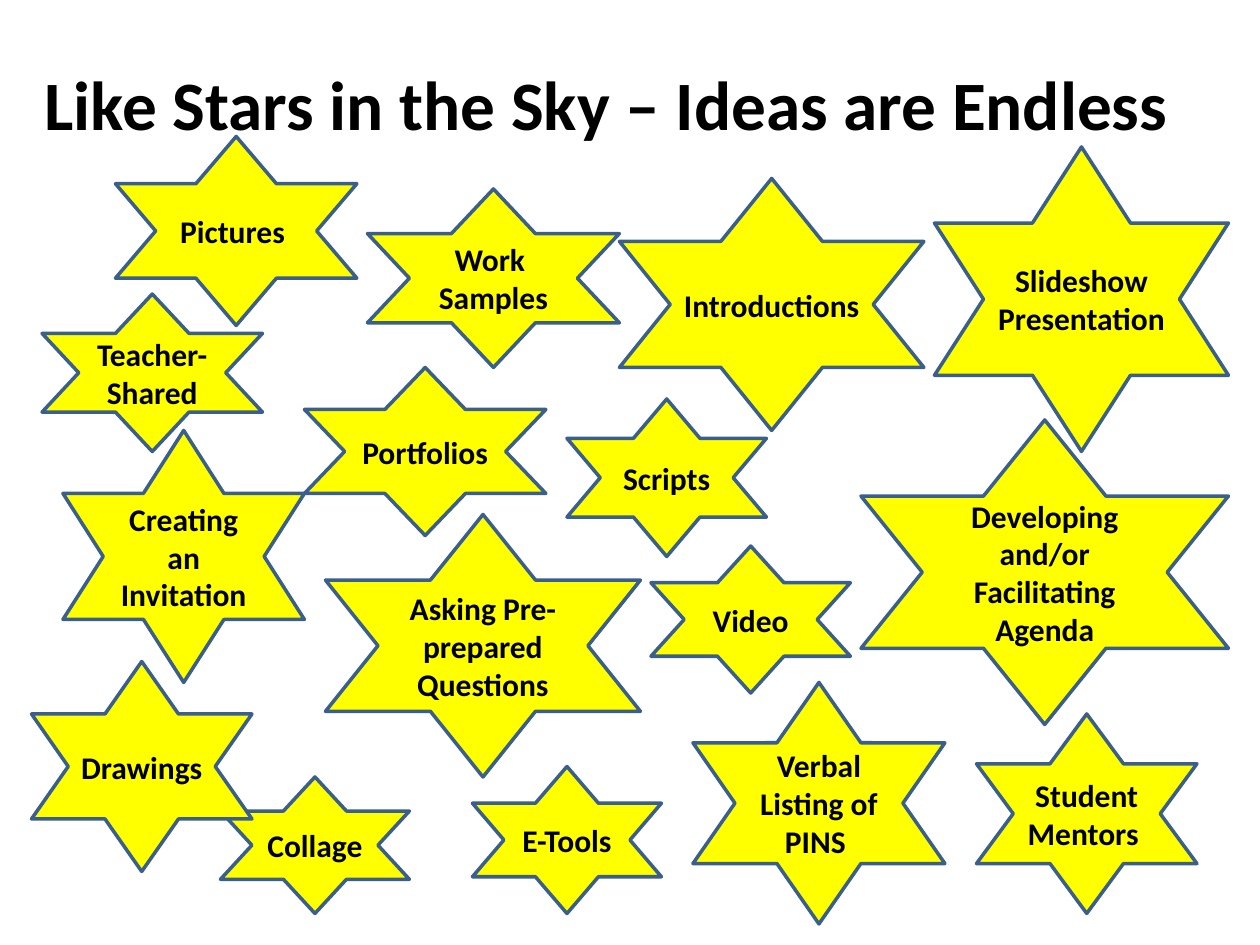
"""Build a slide of ideas set in stars across the sky."""
from pptx import Presentation
from pptx.dml.color import RGBColor
from pptx.enum.shapes import MSO_SHAPE
from pptx.enum.text import MSO_ANCHOR, MSO_AUTO_SIZE, PP_ALIGN
from pptx.util import Inches, Pt

STAR = MSO_SHAPE.STAR_6_POINT
MIDDLE = MSO_ANCHOR.MIDDLE
CENTER = PP_ALIGN.CENTER
FIXED = MSO_AUTO_SIZE.NONE

TITLE = "Like Stars in the Sky – Ideas are Endless "
CELL = Inches(1) // 12
# (text, column, row, columns wide, rows high)
STARS = [
    ("Pictures ", 11, 13, 23, 18),
    ("Creating an Invitation", 6, 41, 23, 24),
    ("Portfolios", 29, 35, 23, 16),
    ("Developing and/or Facilitating Agenda", 82, 40, 35, 29),
    ("Slideshow Presentation ", 89, 14, 28, 29),
    ("Collage", 21, 74, 18, 13),
    ("Verbal Listing of PINS ", 66, 65, 24, 23),
    ("Drawings", 3, 63, 21, 20),
    ("Asking Pre-prepared Questions", 31, 49, 30, 25),
    ("Introductions", 59, 17, 29, 24),
    ("Work \nSamples", 35, 18, 24, 17),
    ("Video", 62, 52, 19, 14),
    ("E-Tools", 45, 73, 18, 14),
    ("Student Mentors ", 93, 68, 21, 19),
    ("Scripts", 54, 38, 19, 15),
    ("Teacher-Shared", 4, 28, 21, 15),
]


def color(code):
    return RGBColor.from_string(code)


def write(shape, text, size, ink="000000", bold=True, face="Calibri"):
    frame = shape.text_frame
    frame.text = text
    frame.word_wrap = True
    frame.auto_size = FIXED
    frame.vertical_anchor = MIDDLE
    for para in frame.paragraphs:
        para.alignment = CENTER
        for run in para.runs:
            font = run.font
            font.name, font.size, font.bold = face, Pt(size), bold
            font.color.rgb = color(ink)


def add_star(slide, text, *cells):
    star = slide.shapes.add_shape(STAR, *(CELL * n for n in cells))
    star.shadow.inherit = False
    star.fill.solid()
    star.fill.fore_color.rgb = color("FFFF00")
    star.line.color.rgb = color("3A5F8C")
    star.line.width = Pt(2)
    write(star, text, 18)


def main():
    deck = Presentation()
    deck.slide_width, deck.slide_height = Inches(10), Inches(7.5)
    slide = deck.slides.add_slide(deck.slide_layouts[5])
    title = slide.shapes.title
    title.left, title.top = Inches(0.25), Inches(0.3)
    title.width, title.height = Inches(9.25), Inches(1.03)
    write(title, TITLE, 39.6)
    for star in STARS:
        add_star(slide, *star)
    deck.save("out.pptx")


if __name__ == "__main__":
    main()
